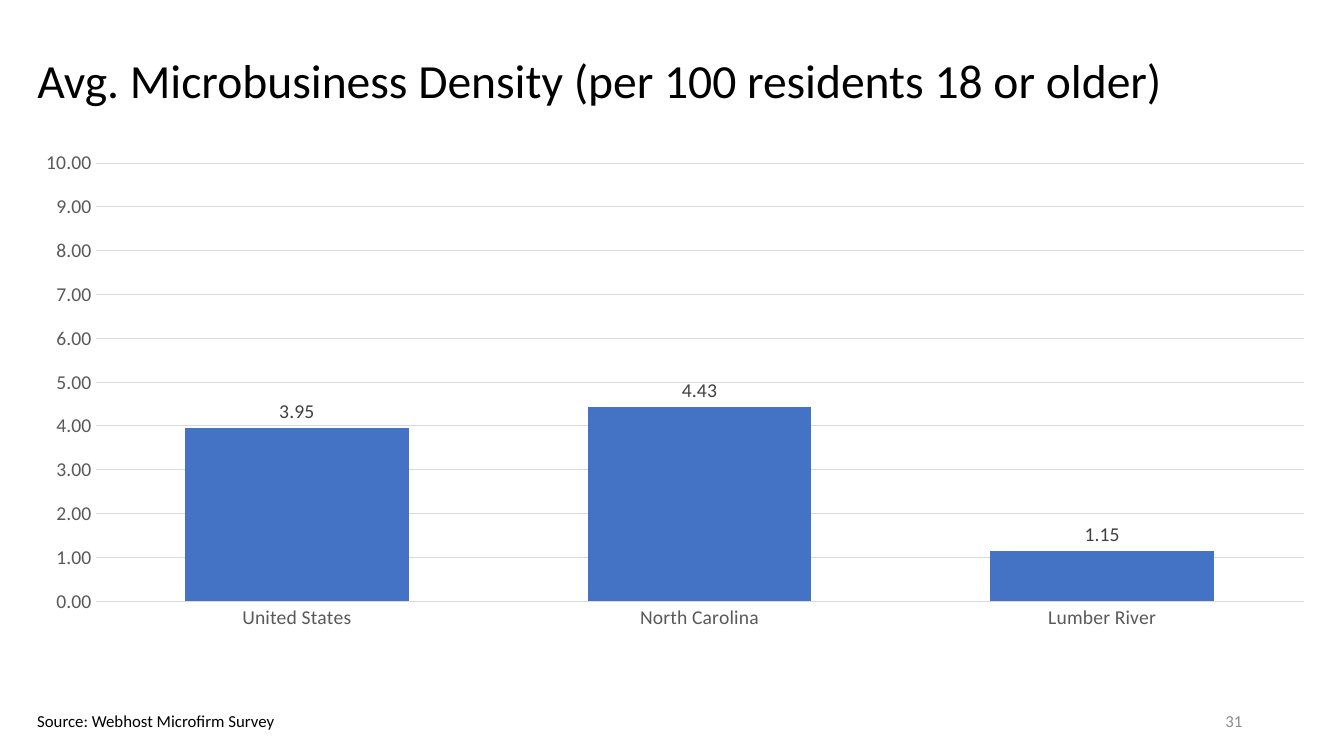
from lxml import etree
from pptx import Presentation
from pptx.chart.data import CategoryChartData
from pptx.dml.color import RGBColor
from pptx.enum.chart import XL_CHART_TYPE, XL_LABEL_POSITION, XL_TICK_MARK
from pptx.enum.text import MSO_ANCHOR, MSO_AUTO_SIZE, PP_ALIGN
from pptx.oxml import parse_xml
from pptx.oxml.ns import nsdecls
from pptx.util import Inches, Pt

FONT = "Calibri"
BLACK = RGBColor(0x00, 0x00, 0x00)
AXIS_GRAY = RGBColor(0x59, 0x59, 0x59)
LABEL_GRAY = RGBColor(0x40, 0x40, 0x40)
NUMBER_GRAY = RGBColor(0x8C, 0x8C, 0x8C)
GRID_GRAY = RGBColor(0xD9, 0xD9, 0xD9)
BAR_BLUE = RGBColor(0x44, 0x72, 0xC4)

DENSITIES = {"United States": 3.95, "North Carolina": 4.43, "Lumber River": 1.15}
PLOT_AREA = {"x": 0.053, "y": 0.035, "w": 0.936, "h": 0.805}


def style_font(font, size, color):
    font.name = FONT
    font.size = Pt(size)
    font.color.rgb = color


def style_line(line, color):
    line.color.rgb = color
    line.width = Pt(0.75)


def write(frame, text, size, color, align=PP_ALIGN.LEFT):
    frame.text = text
    paragraph = frame.paragraphs[0]
    paragraph.alignment = align
    style_font(paragraph.runs[0].font, size, color)
    return paragraph


def add_title(slide, text):
    title = slide.shapes.title
    title.left, title.top = Inches(0.27), Inches(0.2)
    title.width, title.height = Inches(12.76), Inches(1.24)
    title.text_frame.auto_size = MSO_AUTO_SIZE.NONE
    title.text_frame.vertical_anchor = MSO_ANCHOR.MIDDLE
    write(title.text_frame, text, 34, BLACK).line_spacing = 0.9


def add_source(slide, text):
    box = slide.shapes.add_textbox(Inches(0.27), Inches(7), Inches(2.65), Inches(0.3))
    box.text_frame.word_wrap = False
    box.text_frame.auto_size = MSO_AUTO_SIZE.SHAPE_TO_FIT_TEXT
    write(box.text_frame, text, 12, BLACK)


def add_page_number(slide, text):
    box = slide.shapes.add_textbox(Inches(9.42), Inches(6.95), Inches(3), Inches(0.4))
    box.text_frame.word_wrap = True
    box.text_frame.vertical_anchor = MSO_ANCHOR.MIDDLE
    write(box.text_frame, text, 12, NUMBER_GRAY, PP_ALIGN.RIGHT)


def place_plot(chart):
    plot_area = chart.plots[0]._element.getparent()
    for old in plot_area.findall("{*}layout"):
        plot_area.remove(old)
    layout = parse_xml(
        f"<c:layout {nsdecls('c')}><c:manualLayout>"
        '<c:layoutTarget val="inner"/><c:xMode val="edge"/><c:yMode val="edge"/>'
        "</c:manualLayout></c:layout>"
    )
    for side, share in PLOT_AREA.items():
        tag = etree.QName(layout.nsmap["c"], side)
        etree.SubElement(layout[0], tag).set("val", str(share))
    plot_area.insert(0, layout)


def style_axes(chart):
    categories, values = chart.category_axis, chart.value_axis
    for axis in (categories, values):
        axis.major_tick_mark = axis.minor_tick_mark = XL_TICK_MARK.NONE
        style_font(axis.tick_labels.font, 14, AXIS_GRAY)
    style_line(categories.format.line, GRID_GRAY)
    values.minimum_scale, values.maximum_scale, values.major_unit = 0, 10, 1
    values.format.line.fill.background()
    values.tick_labels.number_format = "0.00"
    values.tick_labels.number_format_is_linked = False
    style_line(values.major_gridlines.format.line, GRID_GRAY)


def add_density_chart(slide):
    data = CategoryChartData(number_format="0.00")
    data.categories = DENSITIES.keys()
    data.add_series("Series 1", DENSITIES.values())
    chart = slide.shapes.add_chart(
        XL_CHART_TYPE.COLUMN_CLUSTERED,
        Inches(0.27), Inches(1.43), Inches(12.8), Inches(5.4), data,
    ).chart
    chart.has_title = chart.has_legend = False
    style_font(chart.font, 14, BLACK)
    style_axes(chart)
    place_plot(chart)

    plot = chart.plots[0]
    plot.gap_width = 80
    plot.vary_by_categories = False
    bars = plot.series[0]
    bars.format.fill.solid()
    bars.format.fill.fore_color.rgb = BAR_BLUE
    labels = bars.data_labels
    labels.show_value = True
    labels.position = XL_LABEL_POSITION.OUTSIDE_END
    labels.number_format = "0.00"
    labels.number_format_is_linked = False
    style_font(labels.font, 14, LABEL_GRAY)


def main():
    deck = Presentation()
    deck.slide_width, deck.slide_height = Inches(13.33), Inches(7.5)
    slide = deck.slides.add_slide(deck.slide_layouts.get_by_name("Title Only"))
    add_title(slide, "Avg. Microbusiness Density (per 100 residents 18 or older)")
    add_page_number(slide, "31")
    add_source(slide, "Source: Webhost Microfirm Survey")
    add_density_chart(slide)
    deck.save("out.pptx")


if __name__ == "__main__":
    main()
